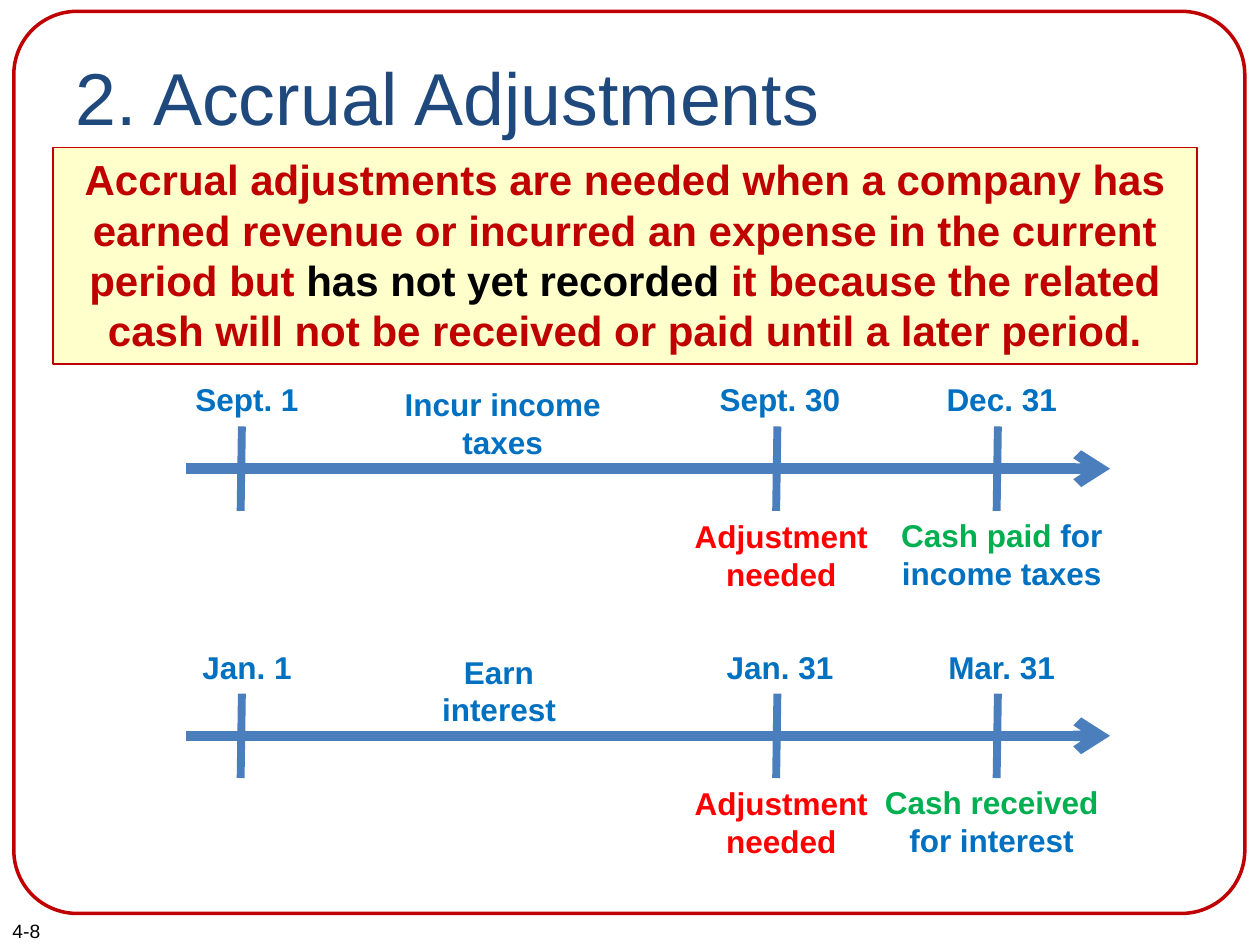
from lxml.etree import SubElement
from pptx import Presentation
from pptx.dml.color import RGBColor
from pptx.enum.shapes import MSO_CONNECTOR, MSO_SHAPE
from pptx.enum.text import MSO_ANCHOR, PP_ALIGN
from pptx.oxml.ns import qn
from pptx.util import Inches, Pt

COLORS = {
    "title": "1F497D", "frame": "C00000", "panel": "FFFFCC", "black": "000000",
    "axis": "4B7EBC", "label": "0070C0", "alert": "FF0000", "cash": "00B050",
}
AXIS_LEFT, AXIS_RIGHT = 1.48, 8.81
TICKS = (1.92, 6.17, 7.92)
DATE_CENTERS = (1.96, 6.19, 7.95)
TICK_REACH = 0.335
DATE_RISE, ACTIVITY_RISE = 0.75, 0.71
TIMELINES = [
    (3.72, ("Sept. 1", "Sept. 30", "Dec. 31"), ("Incur income taxes", 3.99, 2.1),
     ("Cash paid ", "for income taxes", 7.95)),
    (5.84, ("Jan. 1", "Jan. 31", "Mar. 31"), ("Earn interest", 3.96, 1.58),
     ("Cash received ", "for interest", 7.87)),
]


def rgb(name):
    """Return the named colour."""
    return RGBColor.from_string(COLORS[name])


def write(tf, runs, size, bold=False, align=PP_ALIGN.LEFT):
    """Fill a text frame with one paragraph of (text, colour) runs."""
    tf.word_wrap = True
    tf.vertical_anchor = MSO_ANCHOR.TOP
    p = tf.paragraphs[0]
    p.alignment = align
    p.font.name, p.font.size, p.font.bold = "Arial", Pt(size), bold
    for text, color in runs:
        r = p.add_run()
        r.text = text
        r.font.color.rgb = rgb(color)


def add_box(s, kind, box, line_width, fill=None):
    """Add a red-outlined shape, filled or hollow."""
    sp = s.shapes.add_shape(kind, *map(Inches, box))
    sp.shadow.inherit = False
    if fill:
        sp.fill.solid()
        sp.fill.fore_color.rgb = rgb(fill)
    else:
        sp.fill.background()
    sp.line.color.rgb = rgb("frame")
    sp.line.width = Pt(line_width)
    return sp


def add_label(s, center, top, width, height, *runs):
    """Add a bold text box centred on a given x."""
    sp = s.shapes.add_textbox(*map(Inches, (center - width / 2, top, width, height)))
    write(sp.text_frame, runs, 18, True, PP_ALIGN.CENTER)


def add_line(s, start, end, width, arrow=False):
    """Add a straight line, with an open arrowhead if asked."""
    cx = s.shapes.add_connector(MSO_CONNECTOR.STRAIGHT, *map(Inches, start + end))
    cx.line.color.rgb = rgb("axis")
    cx.line.width = Pt(width)
    if arrow:
        SubElement(cx.line._get_or_add_ln(), qn("a:tailEnd"), type="arrow")
    SubElement(cx._element.spPr, qn("a:effectLst"))


def add_timeline(s, y, dates, activity, cash):
    """Add an axis with dated ticks, an activity and two notes."""
    add_line(s, (AXIS_LEFT, y), (AXIS_RIGHT, y), 6, arrow=True)
    for x, center, date in zip(TICKS, DATE_CENTERS, dates):
        add_line(s, (x, y - TICK_REACH), (x - 0.01, y + TICK_REACH), 4.5)
        add_label(s, center, y - DATE_RISE, 1.58, 0.42, (date, "label"))
    text, center, width = activity
    add_label(s, center, y - ACTIVITY_RISE, width, 0.71, (text, "label"))
    note_top = y + TICK_REACH
    add_label(s, 6.2, note_top, 2.25, 0.71, ("Adjustment needed", "alert"))
    event, purpose, center = cash
    add_label(s, center, note_top - 0.01, 2.25, 0.71, (event, "cash"), (purpose, "label"))


def add_title(s, text):
    """Place and fill the title placeholder."""
    sp = s.shapes.title
    sp.left, sp.top, sp.width, sp.height = map(Inches, (0.5, 0.3, 9, 1.25))
    sp.text_frame.margin_top = Inches(0.11)
    write(sp.text_frame, [(text, "title")], 42)


def main():
    """Build the slide and save it."""
    prs = Presentation()
    prs.slide_width, prs.slide_height = Inches(10), Inches(7.5)
    s = prs.slides.add_slide(prs.slide_layouts[5])
    number = s.shapes.add_textbox(*map(Inches, (0, 7.25, 1.42, 0.29)))
    write(number.text_frame, [("4-8", "black")], 11)
    frame = add_box(s, MSO_SHAPE.ROUNDED_RECTANGLE, (0.11, 0.09, 9.77, 7.16), 2)
    frame.adjustments[0] = 0.07
    add_title(s, "2. Accrual Adjustments")
    panel = add_box(s, MSO_SHAPE.RECTANGLE, (0.42, 1.17, 9.08, 1.72), 0.75, "panel")
    write(panel.text_frame, [
        ("Accrual adjustments are needed when a company has earned revenue or "
         "incurred an expense in the current period but ", "frame"),
        ("has not yet recorded ", "black"),
        ("it because the related cash will not be received or paid until a "
         "later period.", "frame"),
    ], 24, True, PP_ALIGN.CENTER)
    for timeline in TIMELINES:
        add_timeline(s, *timeline)
    prs.save("out.pptx")


if __name__ == "__main__":
    main()
